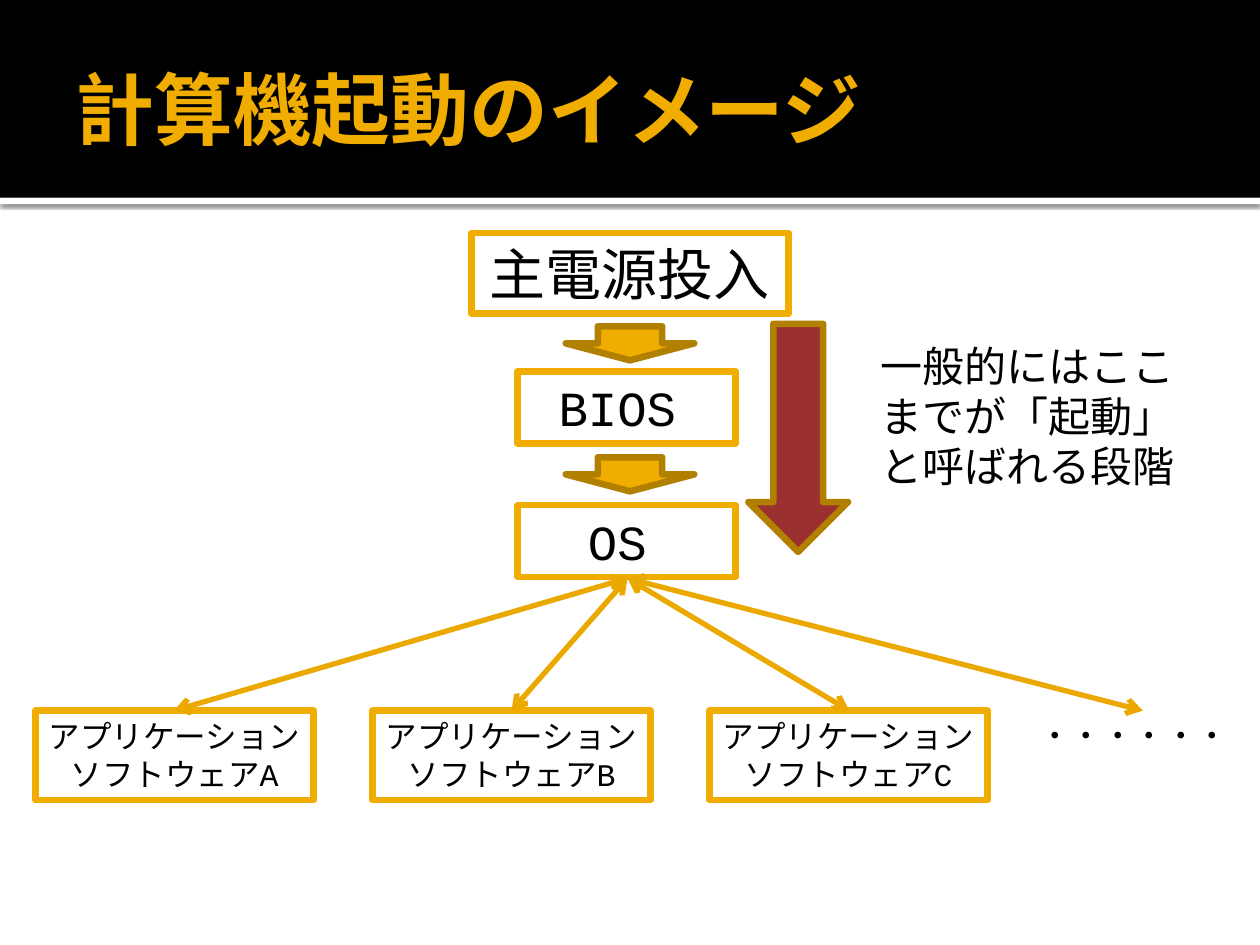
from dataclasses import dataclass

from lxml.etree import SubElement
from pptx import Presentation
from pptx.dml.color import RGBColor
from pptx.enum.shapes import MSO_CONNECTOR, MSO_SHAPE
from pptx.enum.text import MSO_ANCHOR, MSO_AUTO_SIZE, PP_ALIGN
from pptx.oxml.ns import qn
from pptx.util import Inches, Pt

COLORS = {
    "black": "000000",
    "white": "FFFFFF",
    "gold": "F0AD00",
    "brown": "B28000",
    "amber": "EBA900",
    "red": "9A3130",
}
FONT = "Courier New"
FRAME = {
    "word_wrap": True,
    "margin_left": Inches(0.1),
    "margin_right": Inches(0.1),
    "margin_top": Inches(0.05),
    "margin_bottom": Inches(0.05),
}
GROW = FRAME | {
    "auto_size": MSO_AUTO_SIZE.SHAPE_TO_FIT_TEXT,
    "vertical_anchor": MSO_ANCHOR.TOP,
}
HEAD = FRAME | {
    "auto_size": MSO_AUTO_SIZE.NONE,
    "vertical_anchor": MSO_ANCHOR.MIDDLE,
    "margin_right": Inches(0.05),
}


@dataclass
class Box:
    left: float
    top: float
    width: float
    height: float

    def lengths(self) -> list:
        return [Inches(n) for n in (self.left, self.top, self.width, self.height)]


@dataclass
class Label:
    box: Box
    text: str
    size: float
    framed: bool = True
    tail: str = ""


@dataclass
class Arrow:
    box: Box
    fill: str


STEP = 2.675
APP_TOP = 5.64
LABELS = [
    Label(Box(3.74, 1.85, 2.52, 0.64), "主電源投入", 32),
    Label(Box(4.11, 2.95, 1.73, 0.57), "BIOS", 28, tail=" "),
    Label(Box(4.11, 4.01, 1.73, 0.57), "OS", 28, tail=" "),
    *[
        Label(Box(0.28 + i * STEP, APP_TOP, 2.21, 0.71),
              f"アプリケーションソフトウェア{name}", 18)
        for i, name in enumerate("ABC")
    ],
    Label(Box(8.15, 5.63, 1.85, 0.4), "・・・・・・", 18, framed=False),
    Label(Box(6.89, 2.65, 2.83, 1.31),
          "一般的にはここまでが「起動」と呼ばれる段階", 24, framed=False),
]
ARROWS = [
    Arrow(Box(4.49, 2.59, 1.02, 0.27), "gold"),
    Arrow(Box(4.49, 3.63, 1.02, 0.27), "gold"),
    Arrow(Box(5.94, 2.57, 0.79, 1.81), "red"),
]
HUB = (4.98, 4.59)
ENDS = [1.38, 4.06, 6.74, 9.07]


def rgb(name: str) -> RGBColor:
    return RGBColor.from_string(COLORS[name])


def apply(target, values: dict) -> None:
    for key, value in values.items():
        setattr(target, key, value)


def draw_shape(slide, kind, box: Box, fill: str, line: str = ""):
    shape = slide.shapes.add_shape(kind, *box.lengths())
    shape.shadow.inherit = False
    shape.fill.solid()
    shape.fill.fore_color.rgb = rgb(fill)
    if line:
        shape.line.color.rgb = rgb(line)
        shape.line.width = Pt(3.78)
    else:
        shape.line.fill.background()
    return shape


def write(part, text: str, size: float, color: str = "black", bold: bool = False) -> None:
    run = part.add_run()
    run.text = text
    apply(run.font, {"name": FONT, "size": Pt(size), "bold": bold})
    run.font.color.rgb = rgb(color)


def draw_label(slide, label: Label) -> None:
    if label.framed:
        shape = draw_shape(slide, MSO_SHAPE.RECTANGLE, label.box, "white", "gold")
    else:
        shape = slide.shapes.add_textbox(*label.box.lengths())
    apply(shape.text_frame, GROW)
    part = shape.text_frame.paragraphs[0]
    part.alignment = PP_ALIGN.CENTER if label.framed else PP_ALIGN.LEFT
    write(part, label.text, label.size)
    if label.tail:
        write(part, label.tail, 18)


def draw_link(slide, end: float) -> None:
    """Join an application to the OS with a two-headed line."""
    link = slide.shapes.add_connector(
        MSO_CONNECTOR.STRAIGHT, *[Inches(n) for n in (end, APP_TOP, *HUB)])
    link.line.color.rgb = rgb("amber")
    link.line.width = Pt(3)
    for tag in ("a:headEnd", "a:tailEnd"):
        SubElement(link.line._get_or_add_ln(), qn(tag), type="arrow")
    SubElement(link._element.spPr, qn("a:effectLst"))


def add_shadow(shape) -> None:
    effects = shape._element.spPr.find(qn("a:effectLst"))
    shadow = SubElement(effects, qn("a:outerShdw"), blurRad=str(Pt(2.5)),
                        dist=str(Pt(0.8)), dir="5400000", rotWithShape="0")
    tint = SubElement(shadow, qn("a:srgbClr"), val=COLORS["black"])
    SubElement(tint, qn("a:alpha"), val="60000")


def draw_header(slide) -> None:
    strip = draw_shape(slide, MSO_SHAPE.RECTANGLE, Box(0, 1.57, 10, 0.05), "white")
    add_shadow(strip)
    draw_shape(slide, MSO_SHAPE.RECTANGLE, Box(0, 0, 10, 1.57), "black")
    title = slide.shapes.title
    slide.shapes._spTree.append(title._element)  # in front of the band
    place = Box(0.5, 0.17, 9, 1.37).lengths()
    apply(title, dict(zip(("left", "top", "width", "height"), place)))
    apply(title.text_frame, HEAD)
    part = title.text_frame.paragraphs[0]
    part.alignment = PP_ALIGN.LEFT
    write(part, "計算機起動のイメージ", 45, "gold", True)


def main() -> None:
    deck = Presentation()
    apply(deck, {"slide_width": Inches(10), "slide_height": Inches(7.5)})
    slide = deck.slides.add_slide(deck.slide_layouts.get_by_name("Title Only"))
    draw_header(slide)
    for label in LABELS:
        draw_label(slide, label)
    for arrow in ARROWS:
        draw_shape(slide, MSO_SHAPE.DOWN_ARROW, arrow.box, arrow.fill, "brown")
    for end in ENDS:
        draw_link(slide, end)
    deck.save("out.pptx")


if __name__ == "__main__":
    main()
